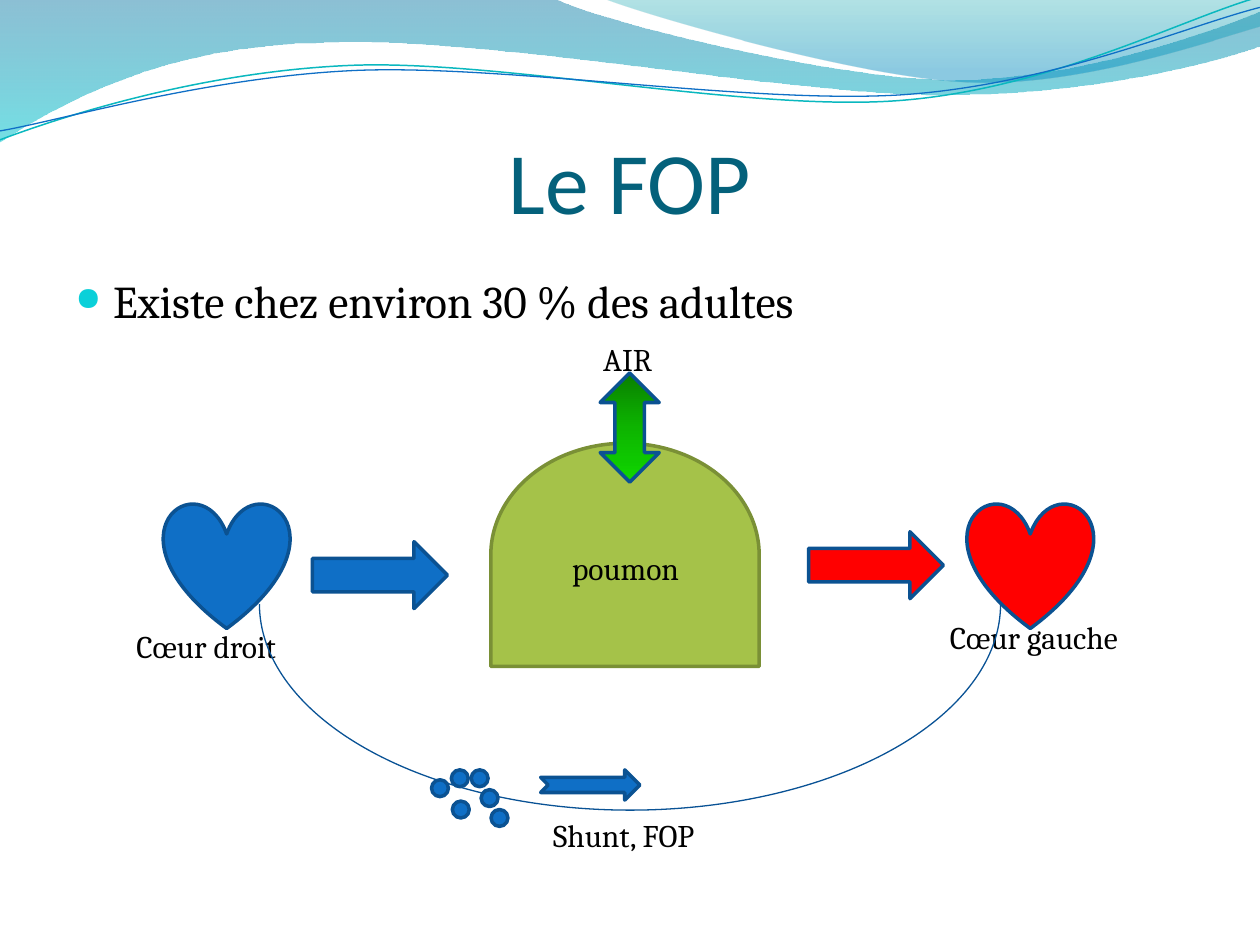
"""Build the slide on the patent foramen ovale and its shunt."""
from dataclasses import dataclass
from typing import Optional

from lxml.etree import SubElement
from pptx import Presentation
from pptx.dml.color import RGBColor
from pptx.enum.shapes import MSO_SHAPE
from pptx.enum.text import MSO_ANCHOR, PP_ALIGN
from pptx.oxml.ns import qn
from pptx.util import Cm, Pt

COLOURS = {
    "blue": "0F6FC6", "navy": "0B5292", "vessel": "095295", "red": "FF0000",
    "lung": "A5C249", "lung edge": "7A9036", "title": "04617B",
    "text": "000000", "bullet": "0BD0D9", "teal": "0AB8BF",
    "deep sea": "0074A1", "lagoon": "00C6CF", "mint": "00A1A9", "sky": "008BBF",
    "dark green": "097F00", "mid green": "0DB400", "light green": "0FD600",
}


@dataclass(frozen=True)
class Stop:
    position: int
    colour: str
    opacity: int = 100


@dataclass(frozen=True)
class Wave:
    start: tuple
    segments: tuple
    gradient: tuple = ()
    edge: Optional[str] = None
    weight: float = 0


@dataclass(frozen=True)
class Part:
    kind: MSO_SHAPE
    box: tuple
    fill: Optional[str] = "blue"
    edge: str = "navy"
    weight: float = 2
    rotation: int = 0
    gradient: tuple = ()
    adjustments: tuple = ()


@dataclass(frozen=True)
class Label:
    text: str
    box: tuple
    size: int = 18
    font: str = "Cambria"
    colour: str = "text"
    align: PP_ALIGN = PP_ALIGN.LEFT
    anchor: MSO_ANCHOR = MSO_ANCHOR.TOP
    insets: tuple = (0.25, 0.13, 0.25, 0.13)


WAVES = (
    Wave((0, -0.03), (
        ((11.18, -0.03),),
        ((12.09, 0.43), (16.87, 1.6), (19.25, 1.6)),
        ((21.67, 1.6), (24.33, 0.66), (25.4, 0.23)),
        ((25.43, 0.91),),
        ((24.97, 1.12), (22.1, 1.93), (18.95, 1.91)),
        ((15.8, 1.91), (9.7, 0.71), (6.53, 0.86)),
        ((3.28, 0.89), (1.17, 2.11), (-0.03, 2.87))),
        gradient=(Stop(0, "deep sea", 45), Stop(100, "lagoon", 55))),
    Wave((12.17, -0.03), (
        ((12.93, 0.28), (17.32, 1.57), (19.53, 1.65)),
        ((21.74, 1.75), (24.41, 0.81), (25.4, 0.53)),
        ((25.4, 0),)),
        gradient=(Stop(0, "mint", 30), Stop(80, "sky", 45))),
    Wave((0, 2.82), (
        ((1.22, 2.36), (4.01, 1.45), (7.04, 1.32)),
        ((10.03, 1.19), (15.06, 2.26), (18.11, 2.03)),
        ((21.16, 1.8), (23.83, 0.38), (25.35, -0.05))),
        edge="teal", weight=0.85),
    Wave((0, 2.64), (
        ((1.19, 2.44), (4.17, 1.55), (7.19, 1.42)),
        ((10.24, 1.3), (15.16, 2.11), (18.21, 1.91)),
        ((21.23, 1.7), (23.9, 0.53), (25.4, 0.15))),
        edge="blue", weight=0.75),
)
ORGANS = (
    Part(MSO_SHAPE.HEART, (3.3, 10.13, 2.54, 2.54)),
    Part(MSO_SHAPE.HEART, (19.5, 10.13, 2.54, 2.54), "red"),
    Part(MSO_SHAPE.FLOWCHART_DELAY, (10.35, 8.48, 4.5, 5.41), "lung", "lung edge",
         rotation=270),
)
TITLE = Label("Le FOP", (1.27, 1.96, 22.86, 3.18), 50, "Calibri", "title",
              PP_ALIGN.CENTER, MSO_ANCHOR.MIDDLE, (0, 0.13, 0, 0))
STATEMENT = Label("Existe chez environ 30 % des adultes", (1.27, 5.38, 22.86, 12.19), 26)
LABELS = (
    Label("Cœur droit", (2.5, 12.52, 3.81, 1.02)),
    Label("Cœur gauche", (18.9, 12.32, 4.19, 1.02)),
    Label("poumon", (10.31, 10.94, 4.6, 1.02), align=PP_ALIGN.CENTER,
          anchor=MSO_ANCHOR.MIDDLE),
    Label("Shunt, FOP", (10.9, 16.33, 3.99, 1.02)),
    Label("AIR", (11.91, 6.73, 1.6, 1.02)),
)
BUBBLES = ((8.7, 15.72), (9.12, 16.15), (9.5, 15.52), (9.1, 15.52),
           (9.9, 16.32), (9.7, 15.92))
FLOWS = (
    Part(MSO_SHAPE.RIGHT_ARROW, (6.3, 10.92, 2.72, 1.35)),
    Part(MSO_SHAPE.RIGHT_ARROW, (16.3, 10.72, 2.72, 1.35), "red"),
    Part(MSO_SHAPE.ARC, (5.23, 8.02, 14.94, 8.31), None, "vessel", 0.75,
         rotation=180, adjustments=(108.06, 0)),
    *(Part(MSO_SHAPE.OVAL, (*corner, 0.34, 0.34)) for corner in BUBBLES),
    Part(MSO_SHAPE.UP_DOWN_ARROW, (12.1, 7.52, 1.19, 2.2),
         gradient=(Stop(0, "dark green"), Stop(50, "mid green"), Stop(100, "light green"))),
    Part(MSO_SHAPE.NOTCHED_RIGHT_ARROW, (10.9, 15.52, 2, 0.61)),
)


def rgb(name: str) -> RGBColor:
    """Look up a named colour."""
    return RGBColor.from_string(COLOURS[name])


def apply(target, values: dict) -> None:
    """Set every attribute given in the values."""
    for name, value in values.items():
        setattr(target, name, value)


def paint(shape, fill: Optional[str], gradient: tuple, edge: Optional[str],
          weight: float) -> None:
    """Give a shape its fill and outline."""
    shape.shadow.inherit = False
    if gradient:
        shape.fill.gradient()
        shape.fill.gradient_angle = 270
        stops = shape._element.spPr.find(".//" + qn("a:gsLst"))
        stops.clear()
        for stop in gradient:
            mark = SubElement(stops, qn("a:gs"), pos=str(stop.position * 1000))
            tint = SubElement(mark, qn("a:srgbClr"), val=COLOURS[stop.colour])
            SubElement(tint, qn("a:alpha"), val=str(stop.opacity * 1000))
    elif fill:
        shape.fill.solid()
        shape.fill.fore_color.rgb = rgb(fill)
    else:
        shape.fill.background()
    if edge:
        shape.line.color.rgb = rgb(edge)
        shape.line.width = Pt(weight)
    else:
        shape.line.fill.background()


def bend(shape, segments: tuple) -> None:
    """Merge each three-point run of an outline into one cubic curve."""
    sides = iter(shape._element.spPr.findall(".//" + qn("a:lnTo")))
    for segment in segments:
        first, *others = [next(sides) for _ in segment]
        if others:
            first.tag = qn("a:cubicBezTo")
        for other in others:
            first.append(other[0])
            other.getparent().remove(other)


def draw_wave(shapes, wave: Wave) -> None:
    """Draw one band or line of the header."""
    corners = [(Cm(x), Cm(y)) for segment in wave.segments for x, y in segment]
    builder = shapes.build_freeform(*map(Cm, wave.start))
    builder.add_line_segments(corners, close=bool(wave.gradient))
    band = builder.convert_to_shape()
    bend(band, wave.segments)
    paint(band, None, wave.gradient, wave.edge, wave.weight)


def draw_part(shapes, part: Part) -> None:
    """Draw one organ, arrow, vessel or bubble."""
    shape = shapes.add_shape(part.kind, *map(Cm, part.box))
    shape.rotation = part.rotation
    for index, value in enumerate(part.adjustments):
        shape.adjustments[index] = value
    paint(shape, part.fill, part.gradient, part.edge, part.weight)


def draw_label(shapes, label: Label):
    """Write a label and return its paragraph."""
    frame = shapes.add_textbox(*map(Cm, label.box)).text_frame
    sides = ("margin_left", "margin_top", "margin_right", "margin_bottom")
    apply(frame, {"word_wrap": True, "vertical_anchor": label.anchor,
                  **dict(zip(sides, map(Cm, label.insets)))})
    paragraph = frame.paragraphs[0]
    paragraph.alignment = label.align
    run = paragraph.add_run()
    run.text = label.text
    apply(run.font, {"name": label.font, "size": Pt(label.size)})
    run.font.color.rgb = rgb(label.colour)
    return paragraph


def add_bullet(paragraph) -> None:
    """Put a coloured bullet and a hanging indent on a paragraph."""
    paragraph.space_before = Pt(5.2)
    properties = paragraph._p.get_or_add_pPr()
    for name, indent in {"marL": Cm(0.76), "indent": Cm(-0.76)}.items():
        properties.set(name, str(int(indent)))
    tint = SubElement(properties, qn("a:buClr"))
    SubElement(tint, qn("a:srgbClr"), val=COLOURS["bullet"])
    SubElement(properties, qn("a:buSzPct"), val="72000")
    SubElement(properties, qn("a:buChar"), char="●")


def main() -> None:
    """Compose and save the slide."""
    deck = Presentation()
    apply(deck, {"slide_width": Cm(25.4), "slide_height": Cm(19.05)})
    shapes = deck.slides.add_slide(deck.slide_layouts[6]).shapes
    for draw, items in ((draw_wave, WAVES), (draw_label, (TITLE,)), (draw_part, ORGANS),
                        (draw_label, LABELS), (draw_part, FLOWS)):
        for item in items:
            draw(shapes, item)
    add_bullet(draw_label(shapes, STATEMENT))
    deck.save("out.pptx")


if __name__ == "__main__":
    main()
